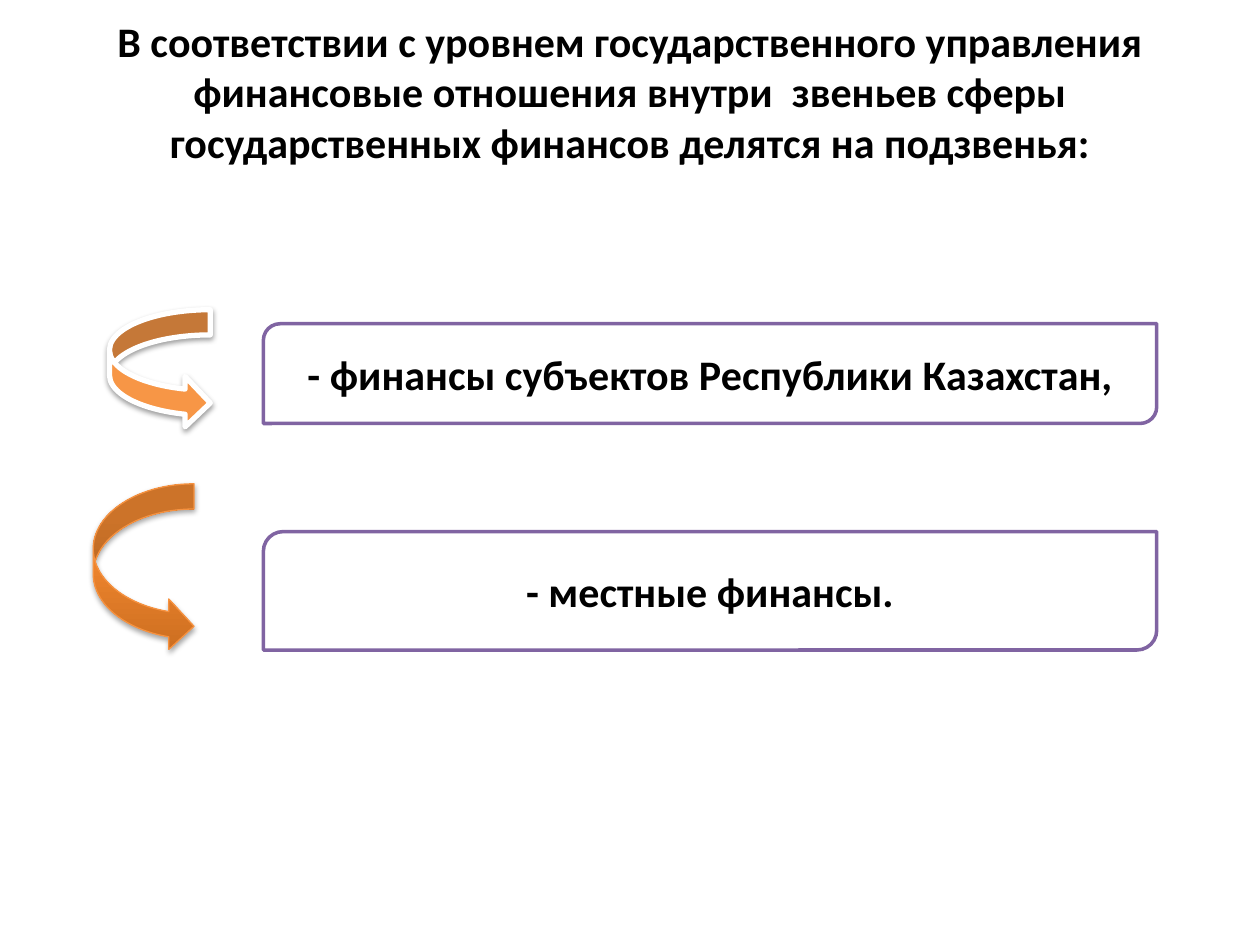
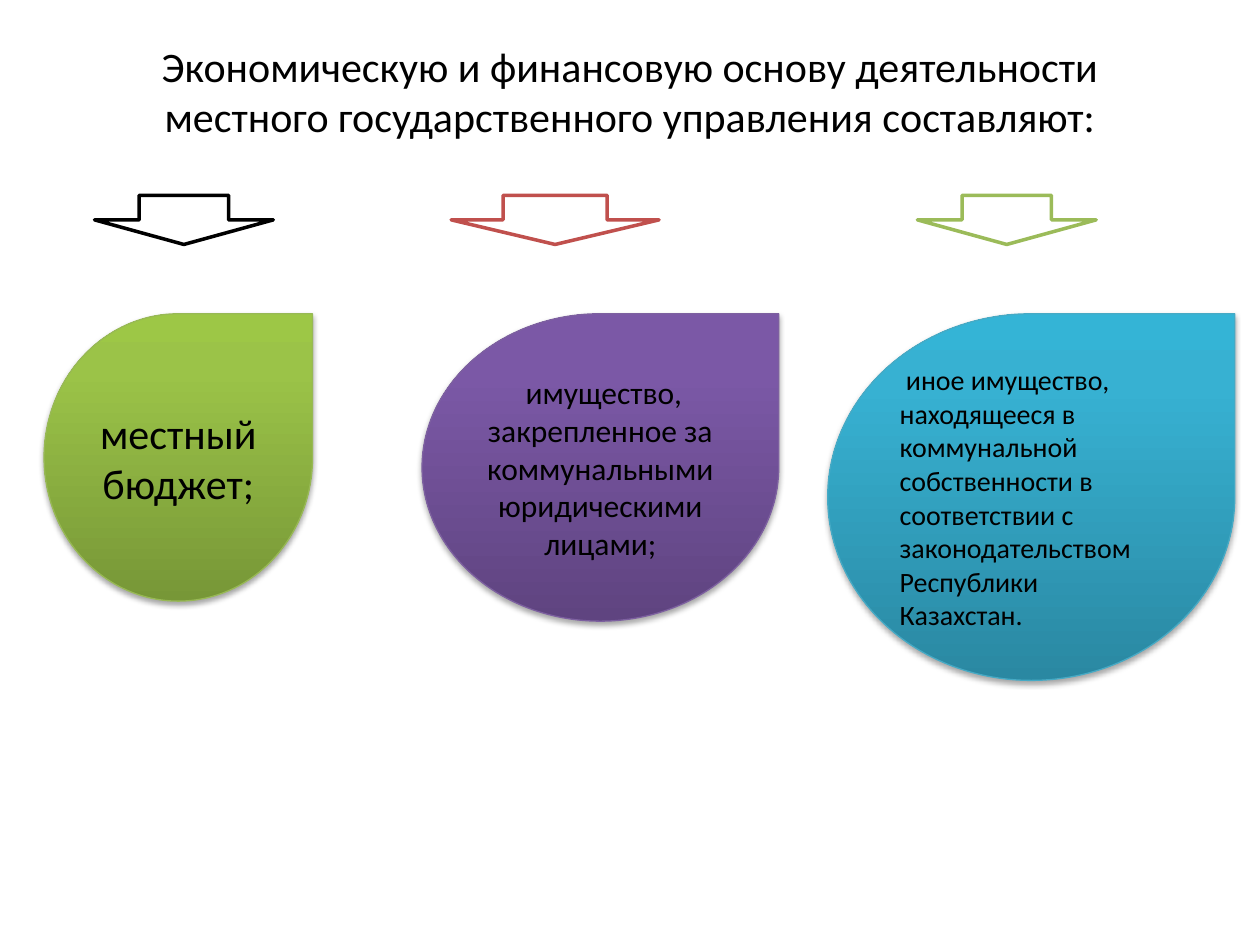
"""Builds two slides on the subdivisions of state finance and the basis of local government."""
from copy import deepcopy

from lxml import etree
from pptx import Presentation
from pptx import util as u
from pptx.dml.color import RGBColor
from pptx.enum import shapes, text
from pptx.oxml.ns import qn

FONT = "Calibri"
BLACK = RGBColor(0, 0, 0)
WHITE = RGBColor(255, 255, 255)
RED = RGBColor(0xC0, 0x50, 0x4D)
GREEN = RGBColor(0x9B, 0xBB, 0x59)
PURPLE = RGBColor(0x80, 0x64, 0xA2)
ORANGE = RGBColor(0xF7, 0x96, 0x46)
ORANGE_EDGE = RGBColor(0xF6, 0x92, 0x40)
GREEN_EDGE = RGBColor(0x98, 0xB9, 0x55)
PURPLE_EDGE = RGBColor(0x7D, 0x60, 0xA0)
BLUE_EDGE = RGBColor(0x46, 0xAA, 0xC5)
ORANGE_FADE = [RGBColor.from_string(c) for c in ("CC6E20", "FF9034", "FF9136")]
GREEN_FADE = [RGBColor.from_string(c) for c in ("779737", "9BC348", "9DC746")]
PURPLE_FADE = [RGBColor.from_string(c) for c in ("5F4480", "7B58A6", "7C57A8")]
BLUE_FADE = [RGBColor.from_string(c) for c in ("2A88A2", "37B1D2", "34B4D6")]
FADE_POSITIONS = (0, 0.8, 1)
SOFT_SHADOW = {"alpha": 35, "distance": 1.8}
CLOSE_SHADOW = {"alpha": 38, "distance": 1.57}

LEVELS_TITLE = ("В соответствии с уровнем государственного управления финансовые отношения "
                "внутри  звеньев сферы государственных финансов делятся на подзвенья:")
LEVELS = [
    {"text": "- финансы субъектов Республики Казахстан,", "top": 185, "height": 57,
     "arrow": (62.6, 177, 57.6, 67.7), "fill": ORANGE, "line": (WHITE, 3), "shadow": CLOSE_SHADOW},
    {"text": "- местные финансы.", "top": 303.8, "height": 67.7,
     "arrow": (53.3, 276.5, 57.6, 95.8), "fill": ORANGE_FADE, "line": (ORANGE_EDGE, 0.75),
     "shadow": SOFT_SHADOW},
]
LEVEL_LEFT, LEVEL_WIDTH = 150.5, 510.5

BASIS_TITLE = ("Экономическую и финансовую основу деятельности местного "
               "государственного управления составляют:")
BASIS = [
    {"text": "местный бюджет;", "size": 24, "align": "CENTER", "drop": (25.2, 153.4, 164.2),
     "fill": GREEN_FADE, "edge": GREEN_EDGE, "arrow": (54, 102.2), "arrow_line": BLACK},
    {"text": " имущество, закрепленное за коммунальными юридическими лицами;", "size": 18,
     "align": "CENTER", "drop": (241.2, 203.8, 175.7), "fill": PURPLE_FADE, "edge": PURPLE_EDGE,
     "arrow": (257.8, 118.8), "arrow_line": RED},
    {"text": " иное имущество, находящееся в коммунальной собственности в соответствии с "
             "законодательством Республики Казахстан.", "size": 16, "align": "LEFT",
     "drop": (473, 232.6, 209.5), "fill": BLUE_FADE, "edge": BLUE_EDGE,
     "arrow": (524.2, 102.2), "arrow_line": GREEN},
]
ARROW_TOP, ARROW_HEIGHT, DROP_TOP = 111.6, 28.1, 179.3


def points(values):
    return [u.Pt(value) for value in values]


def write(shape, content, size=24, bold=False, align="CENTER", bottom=3.6):
    frame = shape.text_frame
    frame_format = {"word_wrap": True, "vertical_anchor": text.MSO_ANCHOR.MIDDLE,
                    "margin_bottom": u.Pt(bottom)}
    for name, value in frame_format.items():
        setattr(frame, name, value)
    paragraph = frame.paragraphs[0]
    paragraph.alignment = getattr(text.PP_ALIGN, align)
    run = paragraph.add_run()
    run.text = content
    for name, value in {"name": FONT, "size": u.Pt(size), "bold": bold}.items():
        setattr(run.font, name, value)
    run.font.color.rgb = BLACK


def fade(shape, colours):
    shape.fill.gradient()
    shape.fill.gradient_angle = 90
    stops = shape._element.spPr.find(qn("a:gradFill")).find(qn("a:gsLst"))
    stops.append(deepcopy(stops[0]))
    for stop, position, colour in zip(shape.fill.gradient_stops, FADE_POSITIONS, colours):
        stop.position = position
        stop.color.rgb = colour


def cast_shadow(shape, alpha, distance):
    effects = shape._element.spPr.find(qn("a:effectLst"))
    outer = etree.SubElement(effects, qn("a:outerShdw"), blurRad=str(u.Pt(3.15)),
                             dist=str(u.Pt(distance)), dir="5400000", rotWithShape="0")
    colour = etree.SubElement(outer, qn("a:srgbClr"), val=str(BLACK))
    etree.SubElement(colour, qn("a:alpha"), val=str(alpha * 1000))


def draw(slide, kind, box, line, fill=WHITE, shadow=None):
    shape = slide.shapes.add_shape(getattr(shapes.MSO_SHAPE, kind), *points(box))
    shape.shadow.inherit = False
    if isinstance(fill, list):
        fade(shape, fill)
    else:
        shape.fill.solid()
        shape.fill.fore_color.rgb = fill
    colour, width = line
    shape.line.color.rgb = colour
    shape.line.width = u.Pt(width)
    if shadow:
        cast_shadow(shape, **shadow)
    return shape


def add_titled_slide(presentation, title, bold=False):
    slide = presentation.slides.add_slide(presentation.slide_layouts[6])
    box = slide.shapes.add_textbox(*points((36, 21.6, 648, 90)))
    write(box, title, bold=bold, bottom=32.9)
    return slide


def build_levels(presentation):
    slide = add_titled_slide(presentation, LEVELS_TITLE, bold=True)
    for level in LEVELS:
        draw(slide, "CURVED_RIGHT_ARROW", level["arrow"], level["line"], level["fill"],
             level["shadow"])
        box = (LEVEL_LEFT, level["top"], LEVEL_WIDTH, level["height"])
        write(draw(slide, "ROUND_2_DIAG_RECTANGLE", box, (PURPLE, 2)), level["text"], bold=True)


def build_basis(presentation):
    slide = add_titled_slide(presentation, BASIS_TITLE)
    for part in BASIS:
        left, width = part["arrow"]
        draw(slide, "DOWN_ARROW", (left, ARROW_TOP, width, ARROW_HEIGHT), (part["arrow_line"], 2))
        left, width, height = part["drop"]
        drop = draw(slide, "TEAR", (left, DROP_TOP, width, height), (part["edge"], 0.75),
                    part["fill"], SOFT_SHADOW)
        write(drop, part["text"], part["size"], align=part["align"])


def main():
    presentation = Presentation()
    presentation.slide_width, presentation.slide_height = points((720, 540))
    build_levels(presentation)
    build_basis(presentation)
    presentation.save("out.pptx")


if __name__ == "__main__":
    main()
